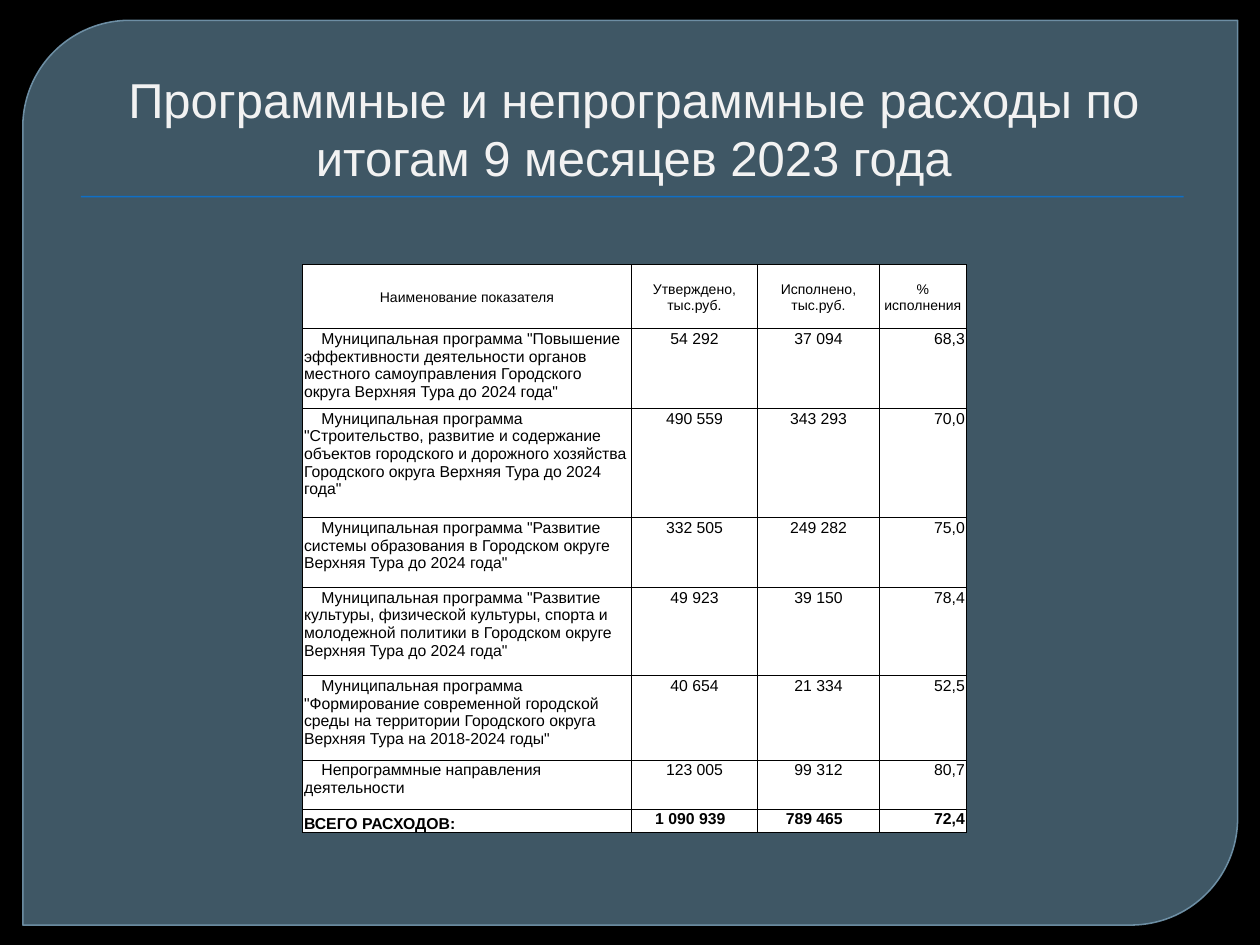
from typing import NamedTuple

from lxml.etree import SubElement
from pptx import Presentation
from pptx.dml.color import RGBColor
from pptx.dml.fill import FillFormat
from pptx.enum.shapes import MSO_SHAPE as Preset
from pptx.enum.text import MSO_ANCHOR as Anchor, PP_ALIGN as Align
from pptx.oxml.ns import qn
from pptx.util import Cm, Pt

FONT = "Arial"
BLACK = "000000"
WHITE = "FFFFFF"
COLUMN_WIDTHS = (6.63, 2.54, 2.46, 1.75)
CELL_INSET = 0.03
FIRST_LINE_INDENT = 0.35
TOTAL_RIGHT_INSET = 0.2


class Box(NamedTuple):
    left: float
    top: float
    width: float
    height: float

    def lengths(self) -> list:
        return [Cm(value) for value in self]


class Expense(NamedTuple):
    height: float
    name: str
    approved: str
    executed: str
    percent: str


class CellStyle(NamedTuple):
    align: Align
    size: int = 9
    bold: bool = False
    anchor: Anchor = Anchor.TOP
    indent: float = 0
    right_inset: float = CELL_INSET


HEADER = Expense(1.3, "Наименование показателя", "Утверждено, тыс.руб.",
                 "Исполнено, тыс.руб.", "% исполнения")
EXPENSES = (
    Expense(1.6, 'Муниципальная программа "Повышение эффективности деятельности органов '
            'местного самоуправления Городского округа Верхняя Тура до 2024 года"',
            "54 292", "37 094", "68,3"),
    Expense(2.21, 'Муниципальная программа "Строительство, развитие и содержание объектов '
            'городского и дорожного хозяйства Городского округа Верхняя Тура до 2024 года"',
            "490 559", "343 293", "70,0"),
    Expense(1.4, 'Муниципальная программа "Развитие системы образования в Городском округе '
            'Верхняя Тура до 2024 года"',
            "332 505", "249 282", "75,0"),
    Expense(1.78, 'Муниципальная программа "Развитие культуры, физической культуры, спорта и '
            'молодежной политики в Городском округе Верхняя Тура до 2024 года"',
            "49 923", "39 150", "78,4"),
    Expense(1.7, 'Муниципальная программа "Формирование современной городской среды на '
            'территории Городского округа Верхняя Тура на 2018-2024 годы"',
            "40 654", "21 334", "52,5"),
    Expense(0.99, "Непрограммные направления деятельности", "123 005", "99 312", "80,7"),
)
TOTAL = Expense(0.48, "ВСЕГО РАСХОДОВ:", "1 090 939", "789 465", "72,4")

HEADER_STYLES = (CellStyle(Align.CENTER, size=8, anchor=Anchor.MIDDLE),) * 4
AMOUNT = CellStyle(Align.CENTER)
PERCENT = CellStyle(Align.RIGHT)
EXPENSE_STYLES = (CellStyle(Align.LEFT, indent=FIRST_LINE_INDENT), AMOUNT, AMOUNT, PERCENT)
TOTAL_AMOUNT = AMOUNT._replace(bold=True, right_inset=TOTAL_RIGHT_INSET)
TOTAL_STYLES = (CellStyle(Align.LEFT, bold=True, anchor=Anchor.BOTTOM),
                TOTAL_AMOUNT, TOTAL_AMOUNT, PERCENT._replace(bold=True))


def paint(fill: FillFormat, color: str, opacity: int = 100) -> None:
    fill.solid()
    fill.fore_color.rgb = RGBColor.from_string(color)
    if opacity < 100:
        color_element = fill._xPr.find(qn("a:solidFill"))[0]
        SubElement(color_element, qn("a:alpha"), val=str(opacity * 1000))


def style_paragraph(paragraph, color: str, size: int, align: Align, bold: bool = False) -> None:
    paragraph.alignment = align
    font = paragraph.font
    font.name = FONT
    font.size = Pt(size)
    font.bold = bold
    paint(font.fill, color)


def add_panel(slide) -> None:
    panel = slide.shapes.add_shape(Preset.ROUND_2_DIAG_RECTANGLE,
                                   *Box(0.46, 0.41, 24.49, 18.24).lengths())
    panel.shadow.inherit = False
    panel.adjustments[0] = 0.118
    panel.adjustments[1] = 0
    paint(panel.fill, "61869C", 65)
    panel.line.width = Pt(0.87)
    paint(panel.line.fill, "779BB2", 88)


def add_title_rule(slide) -> None:
    rule = slide.shapes.add_shape(Preset.RECTANGLE, *Box(1.63, 3.95, 22.23, 0.03).lengths())
    rule.shadow.inherit = False
    paint(rule.fill, "0F6FC6")
    rule.line.fill.background()


def add_title(slide, text: str) -> None:
    frame = slide.shapes.add_textbox(*Box(1.27, 0.71, 22.86, 3.18).lengths()).text_frame
    frame.word_wrap = True
    frame.vertical_anchor = Anchor.BOTTOM
    frame.margin_left = Cm(0.4)
    paragraph = frame.paragraphs[0]
    paragraph.text = text
    style_paragraph(paragraph, "F2F2F2", 28, Align.CENTER)


def add_borders(cell) -> None:
    properties = cell._tc.get_or_add_tcPr()
    for side in ("lnL", "lnR", "lnT", "lnB"):
        line = SubElement(properties, qn(f"a:{side}"), w=str(Pt(0.5)))
        fill = SubElement(line, qn("a:solidFill"))
        SubElement(fill, qn("a:srgbClr"), val=BLACK)


def fill_cell(cell, text: str, style: CellStyle) -> None:
    add_borders(cell)
    paint(cell.fill, WHITE)
    cell.margin_left = cell.margin_top = Cm(CELL_INSET)
    cell.margin_right = Cm(style.right_inset)
    cell.margin_bottom = 0
    cell.vertical_anchor = style.anchor
    paragraph = cell.text_frame.paragraphs[0]
    paragraph.text = text
    style_paragraph(paragraph, BLACK, style.size, style.align, style.bold)
    if style.indent:
        paragraph._p.get_or_add_pPr().set("indent", str(Cm(style.indent)))


def add_expense_table(slide) -> None:
    rows = [(HEADER, HEADER_STYLES),
            *((expense, EXPENSE_STYLES) for expense in EXPENSES),
            (TOTAL, TOTAL_STYLES)]
    height = sum(expense.height for expense, _ in rows)
    box = Box(6.1, 5.33, sum(COLUMN_WIDTHS), height)
    table = slide.shapes.add_table(len(rows), len(COLUMN_WIDTHS), *box.lengths()).table
    table.first_row = table.horz_banding = False
    for column, width in zip(table.columns, COLUMN_WIDTHS):
        column.width = Cm(width)
    for row, (expense, styles) in zip(table.rows, rows):
        row.height = Cm(expense.height)
        for cell, text, style in zip(row.cells, expense[1:], styles):
            fill_cell(cell, text, style)


def main() -> None:
    presentation = Presentation()
    presentation.slide_width = Cm(25.4)
    presentation.slide_height = Cm(19.05)
    slide = presentation.slides.add_slide(presentation.slide_layouts[6])
    paint(slide.background.fill, BLACK)
    add_panel(slide)
    add_title_rule(slide)
    add_title(slide, "Программные и непрограммные расходы по итогам 9 месяцев 2023 года")
    add_expense_table(slide)
    presentation.save("out.pptx")


if __name__ == "__main__":
    main()
